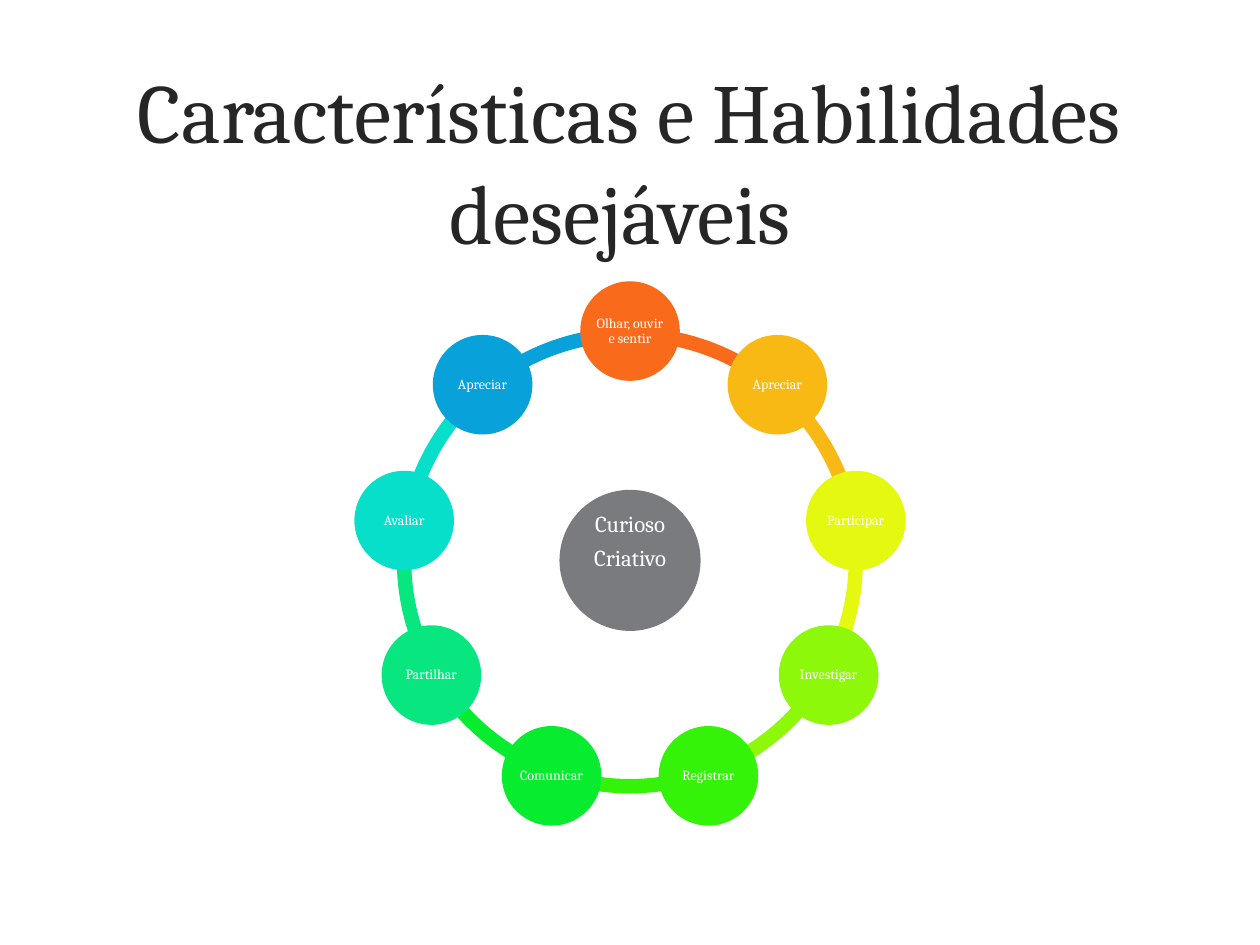
"""Build a slide with a ring of nine skills around a central circle."""
import math

from pptx import Presentation
from pptx import util as u
from pptx.dml.color import RGBColor
from pptx.enum import shapes, text

WHITE = RGBColor(0xFF, 0xFF, 0xFF)
DARK = RGBColor(0x26, 0x26, 0x26)
GRAY = RGBColor(0x79, 0x7B, 0x7E)
SKILLS = [
    ("Olhar, ouvir e sentir", RGBColor(0xF9, 0x6A, 0x1B)),
    ("Apreciar", RGBColor(0xF9, 0xB9, 0x15)),
    ("Participar", RGBColor(0xE5, 0xF8, 0x0F)),
    ("Investigar", RGBColor(0x8D, 0xF8, 0x09)),
    ("Registrar", RGBColor(0x34, 0xF3, 0x08)),
    ("Comunicar", RGBColor(0x08, 0xEC, 0x30)),
    ("Partilhar", RGBColor(0x08, 0xE6, 0x80)),
    ("Avaliar", RGBColor(0x08, 0xDF, 0xCB)),
    ("Apreciar", RGBColor(0x08, 0xA1, 0xD9)),
]

presentation = Presentation()
presentation.slide_width, presentation.slide_height = u.Inches(10), u.Inches(7.5)
WIDTH, HEIGHT = presentation.slide_width, presentation.slide_height
CENTER_X, CENTER_Y = WIDTH * 0.5, HEIGHT * 0.593
RING, ORBIT = WIDTH * 0.37, WIDTH * 0.182
HUB, NODE = WIDTH * 0.112, WIDTH * 0.079
STEP = 360 / len(SKILLS)
DEGREE = 0.6


def add_round(kind, x, y, size, color):
    left, top = int(x - size / 2), int(y - size / 2)
    shape = slide.shapes.add_shape(kind, left, top, int(size), int(size))
    shape.shadow.inherit = False
    shape.fill.solid()
    shape.fill.fore_color.rgb = color
    shape.line.fill.background()
    return shape


def write(shape, lines, size, color, frame_format, paragraph_format):
    frame = shape.text_frame
    frame.text = "\n".join(lines)
    for name, value in frame_format.items():
        setattr(frame, name, value)
    for paragraph in frame.paragraphs:
        for name, value in paragraph_format.items():
            setattr(paragraph, name, value)
        for name, value in {"name": "Cambria", "size": u.Pt(size)}.items():
            setattr(paragraph.font, name, value)
        paragraph.font.color.rgb = color


slide = presentation.slides.add_slide(presentation.slide_layouts[5])
title = slide.shapes.title
title_box = {"left": WIDTH * 0.06, "top": HEIGHT * 0.064,
             "width": WIDTH * 0.879, "height": HEIGHT * 0.211}
for name, value in title_box.items():
    setattr(title, name, int(value))
write(title, ["Características e Habilidades desejáveis "], 48, DARK,
      {"word_wrap": True, "auto_size": text.MSO_AUTO_SIZE.NONE,
       "vertical_anchor": text.MSO_ANCHOR.MIDDLE},
      {"alignment": text.PP_ALIGN.CENTER})

for index, (label, color) in enumerate(SKILLS):
    start = (270 + STEP * index) % 360
    arc = add_round(shapes.MSO_SHAPE.BLOCK_ARC, CENTER_X, CENTER_Y, RING, color)
    arc.adjustments[0] = start * DEGREE
    arc.adjustments[1] = (start + STEP) % 360 * DEGREE
    arc.adjustments[2] = 0.031

margin = u.Inches(0.01)
circle_frame = {"word_wrap": True, "vertical_anchor": text.MSO_ANCHOR.MIDDLE,
                "margin_left": margin, "margin_right": margin,
                "margin_top": margin, "margin_bottom": margin}
circle_paragraph = {"alignment": text.PP_ALIGN.CENTER, "line_spacing": 0.9}

hub = add_round(shapes.MSO_SHAPE.OVAL, CENTER_X, CENTER_Y, HUB, GRAY)
write(hub, ["Curioso", "Criativo"], 13, WHITE,
      {**circle_frame, "vertical_anchor": text.MSO_ANCHOR.TOP, "margin_top": u.Inches(0.02)},
      {**circle_paragraph, "space_after": u.Pt(5)})

for index, (label, color) in enumerate(SKILLS):
    angle = math.radians(270 + STEP * index)
    node = add_round(shapes.MSO_SHAPE.OVAL, CENTER_X + ORBIT * math.cos(angle),
                     CENTER_Y + ORBIT * math.sin(angle), NODE, color)
    write(node, [label], 8, WHITE, circle_frame, circle_paragraph)

presentation.save("out.pptx")
